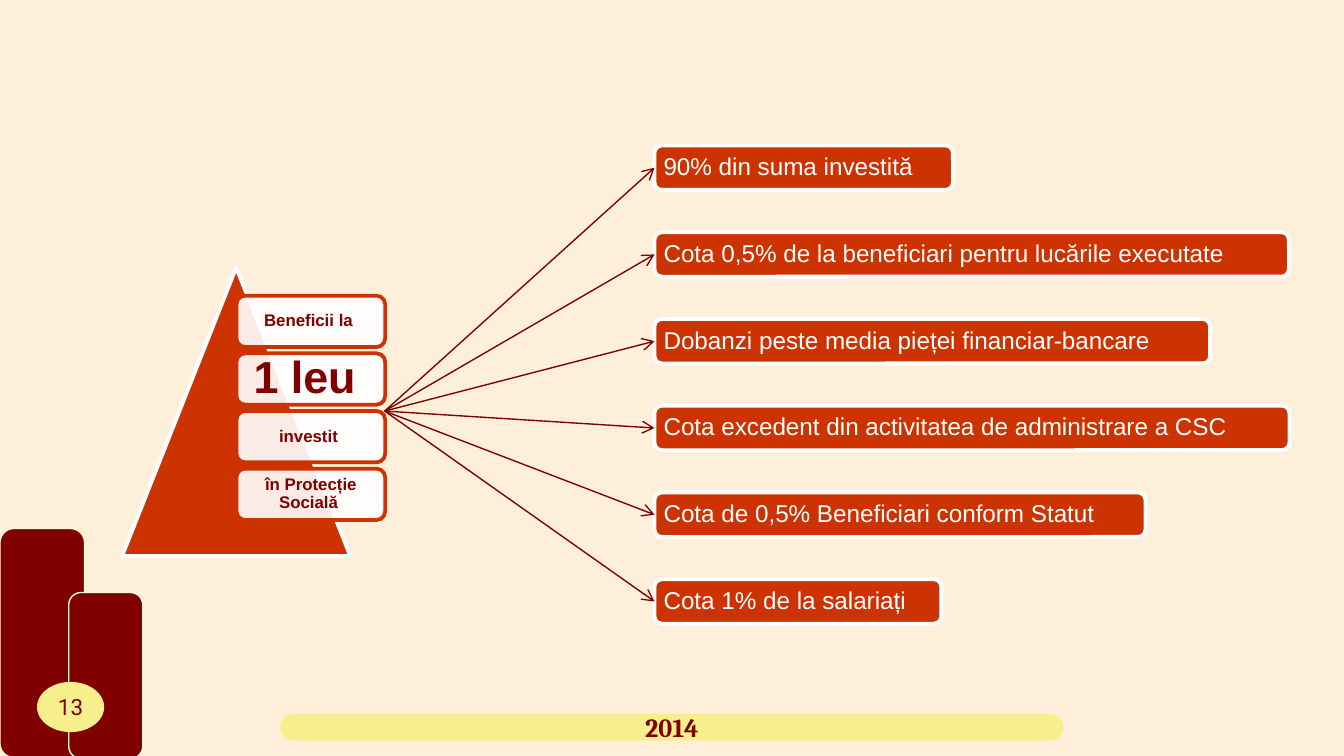
import pptx
import pptx.util
import pptx.dml.color
import pptx.enum.shapes
import pptx.enum.text
import pptx.oxml
import pptx.oxml.ns
from pptx.util import Cm

SHAPE = pptx.enum.shapes.MSO_SHAPE
ALIGN = pptx.enum.text.PP_ALIGN
MAROON, RED, YELLOW = "800000", "CC3300", "F7EF8C"
WHITE, CREAM = "FFFFFF", "FFFDD7"


def rgb(value):
    return pptx.dml.color.RGBColor.from_string(value)


def sub(parent, tag, **attrs):
    """Append a child element to an XML element."""
    el = parent.makeelement(pptx.oxml.ns.qn(tag), attrs)
    parent.append(el)
    return el


class Deck:
    def __init__(self, width, height, background):
        self.prs = pptx.Presentation()
        self.prs.slide_width, self.prs.slide_height = Cm(width), Cm(height)
        self.s = self.prs.slides.add_slide(self.prs.slide_layouts[6])
        self.s.background.fill.solid()
        self.s.background.fill.fore_color.rgb = rgb(background)

    def shape(self, kind, box, fill, line=None, weight=2, alpha=None, adj=None):
        sp = self.s.shapes.add_shape(kind, *map(Cm, box))
        sp.shadow.inherit = False
        sp.fill.solid()
        sp.fill.fore_color.rgb = rgb(fill)
        if alpha:
            clr = sp.fill._xPr.find(".//" + pptx.oxml.ns.qn("a:srgbClr"))
            sub(clr, "a:alpha", val=str(alpha * 1000))
        if line:
            sp.line.color.rgb = rgb(line)
            sp.line.width = pptx.util.Pt(weight)
        else:
            sp.line.fill.background()
        if adj is not None:
            sp.adjustments[0] = adj
        return sp

    def text(self, sp, text, size, color, font="Arial", bold=False,
             align=ALIGN.CENTER, inset=0, wrap=True, spacing=0.9):
        tf = sp.text_frame
        frame = {"word_wrap": wrap,
                 "vertical_anchor": pptx.enum.text.MSO_ANCHOR.MIDDLE}
        for side in ("left", "right", "top", "bottom"):
            frame["margin_" + side] = Cm(inset)
        for name, value in frame.items():
            setattr(tf, name, value)
        p = tf.paragraphs[0]
        p.alignment, p.line_spacing = align, spacing
        r = p.add_run()
        r.text = text
        style = {"name": font, "size": pptx.util.Pt(size), "bold": bold}
        for name, value in style.items():
            setattr(r.font, name, value)
        r.font.color.rgb = rgb(color)

    def arrow(self, start, end, color, weight=0.75):
        cx = self.s.shapes.add_connector(
            pptx.enum.shapes.MSO_CONNECTOR.STRAIGHT, *map(Cm, start + end))
        cx.line.color.rgb = rgb(color)
        cx.line.width = pptx.util.Pt(weight)
        sub(cx.line._get_or_add_ln(), "a:tailEnd", type="arrow")
        sub(cx._element.spPr, "a:effectLst")


def main():
    d = Deck(25.4, 14.29, "FEEFDB")

    for box in ((0, 9.99, 1.6, 4.33), (1.3, 11.2, 1.4, 3.14)):
        d.shape(SHAPE.ROUNDED_RECTANGLE, box, MAROON, CREAM, weight=0.75)
    year = d.shape(SHAPE.ROUNDED_RECTANGLE, (5.3, 13.5, 14.8, 0.5), YELLOW, adj=0.5)
    d.text(year, "2014", 14, MAROON, font="Cambria", bold=True, wrap=False, spacing=1)
    number = d.shape(SHAPE.OVAL, (0.7, 12.89, 1.27, 0.95), YELLOW)
    d.text(number, "13", 12, MAROON, font="Roboto", wrap=False, spacing=1)

    d.shape(SHAPE.ISOSCELES_TRIANGLE, (2.31, 5.06, 4.31, 5.45), RED, WHITE)
    cards = (("Beneficii la ", 9, 0.1), ("1 leu ", 24, 0.25),
             ("investit ", 9, 0.1), ("în Protecție Socială ", 9, 0.1))
    for i, (label, size, inset) in enumerate(cards):
        sp = d.shape(SHAPE.ROUNDED_RECTANGLE, (4.47, 5.59 + 1.09 * i, 2.81, 0.97),
                     WHITE, RED, alpha=90)
        d.text(sp, label, size, MAROON, bold=True, inset=inset)

    benefits = (("90% din suma investită", 5.64),
                ("Cota 0,5% de la beneficiari pentru lucările executate", 11.99),
                ("Dobanzi peste media pieței financiar-bancare", 10.5),
                ("Cota excedent din activitatea de administrare a CSC", 12),
                ("Cota de 0,5% Beneficiari conform Statut", 9.28),
                ("Cota 1% de la salariați", 5.42))
    left, top, pitch, height = 12.37, 2.75, 1.64, 0.84
    for i, (label, width) in enumerate(benefits):
        y = top + pitch * i
        sp = d.shape(SHAPE.ROUNDED_RECTANGLE, (left, y, width, height), RED, WHITE)
        d.text(sp, label, 13, WHITE, align=ALIGN.LEFT, inset=0.13)
        d.arrow((7.27, 7.77), (left, y + height / 2), MAROON)

    d.prs.save("out.pptx")


if __name__ == "__main__":
    main()
